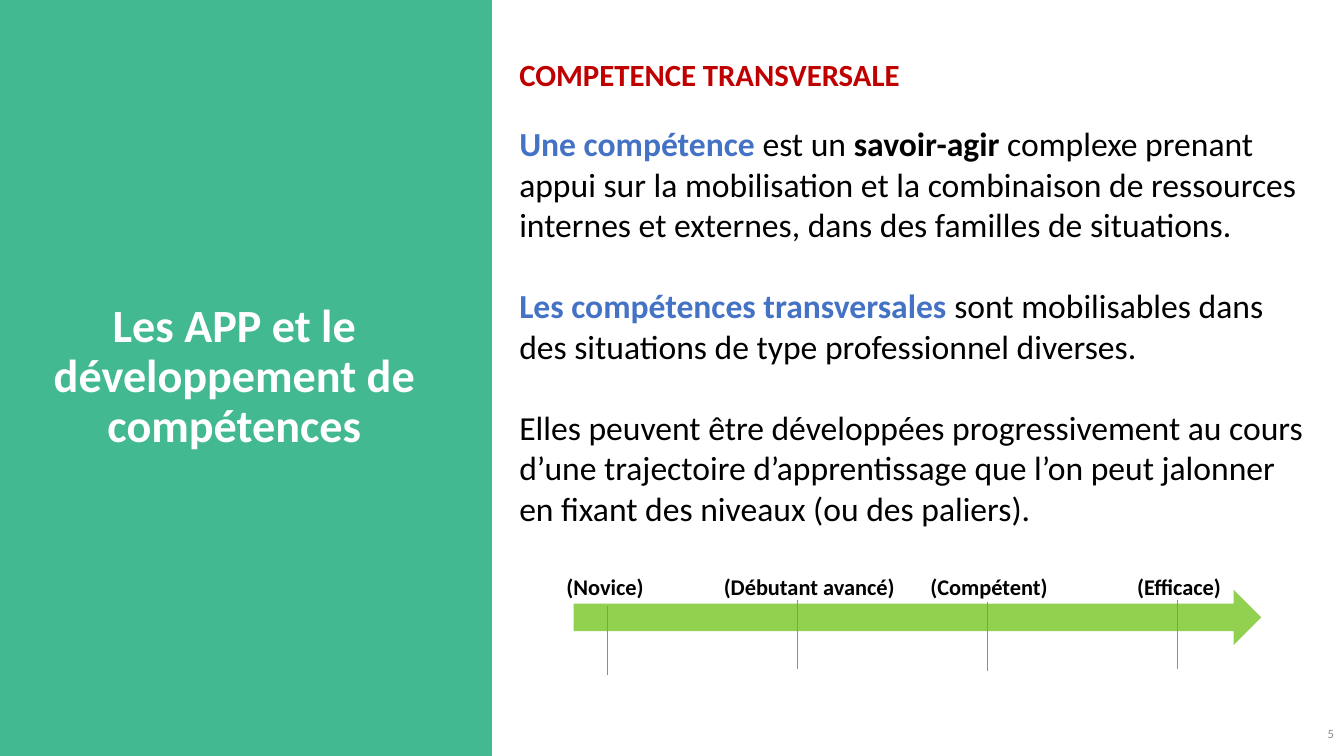
from lxml.etree import SubElement
from pptx import Presentation
from pptx.dml.color import RGBColor
from pptx.enum.shapes import MSO_CONNECTOR, MSO_SHAPE
from pptx.enum.text import MSO_ANCHOR, MSO_AUTO_SIZE, PP_ALIGN
from pptx.oxml.ns import qn
from pptx.util import Inches, Pt

COLORS = {
    "panel": "42B990", "white": "FFFFFF", "black": "000000", "heading": "C00000",
    "term": "4472C4", "arrow": "92D050", "tick": "5B9BD5", "number": "8C8C8C",
}

# Each paragraph: size, space before, runs of (text, colour, bold)
DEFINITIONS = [
    (22, 0, [("COMPETENCE TRANSVERSALE", "heading", True)]),
    (24, 22, [
        ("Une compétence ", "term", True),
        ("est un ", "black", False),
        ("savoir-agir", "black", True),
        (" complexe prenant appui sur la mobilisation et la combinaison de ressources "
         "internes et externes, dans des familles de situations.", "black", False),
    ]),
    (24, 29.3, [
        ("Les compétences transversales ", "term", True),
        ("sont mobilisables dans des situations de type professionnel diverses.",
         "black", False),
    ]),
    (24, 29.3, [
        ("Elles peuvent être développées progressivement au cours d’une trajectoire "
         "d’apprentissage que l’on peut jalonner en fixant des niveaux (ou des paliers).",
         "black", False),
    ]),
]

# Each level: label, label left and width, tick top (relative to the scale's box)
LEVELS = [
    ("(Novice)", 0, 0.98, 0.37),
    ("(Débutant avancé)", 1.56, 1.92, 0.31),
    ("(Compétent)", 3.61, 1.38, 0.33),
    ("(Efficace)", 5.66, 1.05, 0.31),
]


def rgb(name):
    return RGBColor.from_string(COLORS[name])


def place(part, left, top, width, height):
    part.left, part.top = Inches(left), Inches(top)
    part.width, part.height = Inches(width), Inches(height)


def style(font, size, color=None, bold=None):
    font.name, font.size, font.bold = "Calibri", Pt(size), bold
    if color:
        font.color.rgb = rgb(color)


def add_block(slide, preset, color, *box):
    block = slide.shapes.add_shape(preset, *map(Inches, box))
    block.shadow.inherit = False
    block.fill.solid()
    block.fill.fore_color.rgb = rgb(color)
    block.line.fill.background()


def add_label(slide, text, size, color, bold, *box):
    label = slide.shapes.add_textbox(*map(Inches, box))
    label.text_frame.text = text
    paragraph = label.text_frame.paragraphs[0]
    style(paragraph.font, size, color, bold)
    return label.text_frame, paragraph


def add_title_panel(slide, left, top, width, height):
    add_block(slide, MSO_SHAPE.RECTANGLE, "panel", left, top, width, height)
    title = slide.shapes.title
    place(title, left + 0.1, top + 0.67, width - 0.43, height - 1.35)
    # Bring the title in front of the panel
    slide.shapes.element.append(title.element)
    frame = title.text_frame
    frame.text = "Les APP et le développement de compétences"
    frame.auto_size = MSO_AUTO_SIZE.NONE
    frame.vertical_anchor = MSO_ANCHOR.MIDDLE
    paragraph = frame.paragraphs[0]
    paragraph.alignment = PP_ALIGN.CENTER
    paragraph.line_spacing = 0.9
    style(paragraph.font, 33, "white", True)


def add_definitions(slide, left, top, width, height):
    body = slide.placeholders[1]
    place(body, left, top, width, height)
    frame = body.text_frame
    frame.auto_size = MSO_AUTO_SIZE.NONE
    for index, (size, space, runs) in enumerate(DEFINITIONS):
        paragraph = frame.add_paragraph() if index else frame.paragraphs[0]
        paragraph.space_before = Pt(space)
        # Plain text: no bullet, no indent
        properties = paragraph._p.get_or_add_pPr()
        properties.set("marL", "0")
        properties.set("indent", "0")
        SubElement(properties, qn("a:buNone"))
        style(paragraph.font, size)
        for text, color, bold in runs:
            run = paragraph.add_run()
            run.text = text
            run.font.bold = bold
            run.font.color.rgb = rgb(color)


def add_level_scale(slide, left, top, width, height):
    for text, label_left, label_width, _ in LEVELS:
        frame, _ = add_label(slide, text, 16, "black", True,
                             left + label_left, top, label_width, 0.37)
        frame.word_wrap = False
    add_block(slide, MSO_SHAPE.RIGHT_ARROW, "arrow",
              left + 0.17, top + 0.21, width - 0.17, 0.55)
    # Evenly spaced level ticks
    tick_gap = (width - 1.33) / 3
    for index, (*_, tick_top) in enumerate(LEVELS):
        x, y = left + 0.5 + index * tick_gap, top + tick_top
        tick = slide.shapes.add_connector(
            MSO_CONNECTOR.STRAIGHT, Inches(x), Inches(y),
            Inches(x), Inches(y + height - 0.37))
        tick.line.color.rgb = rgb("tick")
        tick.line.width = Pt(0.5)
        SubElement(tick._element.spPr, qn("a:effectLst"))


def add_page_number(slide, *box):
    frame, paragraph = add_label(slide, "5", 9, "number", False, *box)
    frame.word_wrap = True
    frame.vertical_anchor = MSO_ANCHOR.MIDDLE
    paragraph.alignment = PP_ALIGN.RIGHT


def main():
    deck = Presentation()
    deck.slide_width, deck.slide_height = Inches(13.33), Inches(7.5)
    slide = deck.slides.add_slide(deck.slide_layouts[1])
    add_title_panel(slide, 0, 0, 4.88, 7.5)
    add_definitions(slide, 5.05, 0.5, 8.06, 5)
    add_level_scale(slide, 5.52, 5.64, 6.99, 1.06)
    add_page_number(slide, 10.33, 7.08, 3, 0.4)
    deck.save("out.pptx")


if __name__ == "__main__":
    main()
